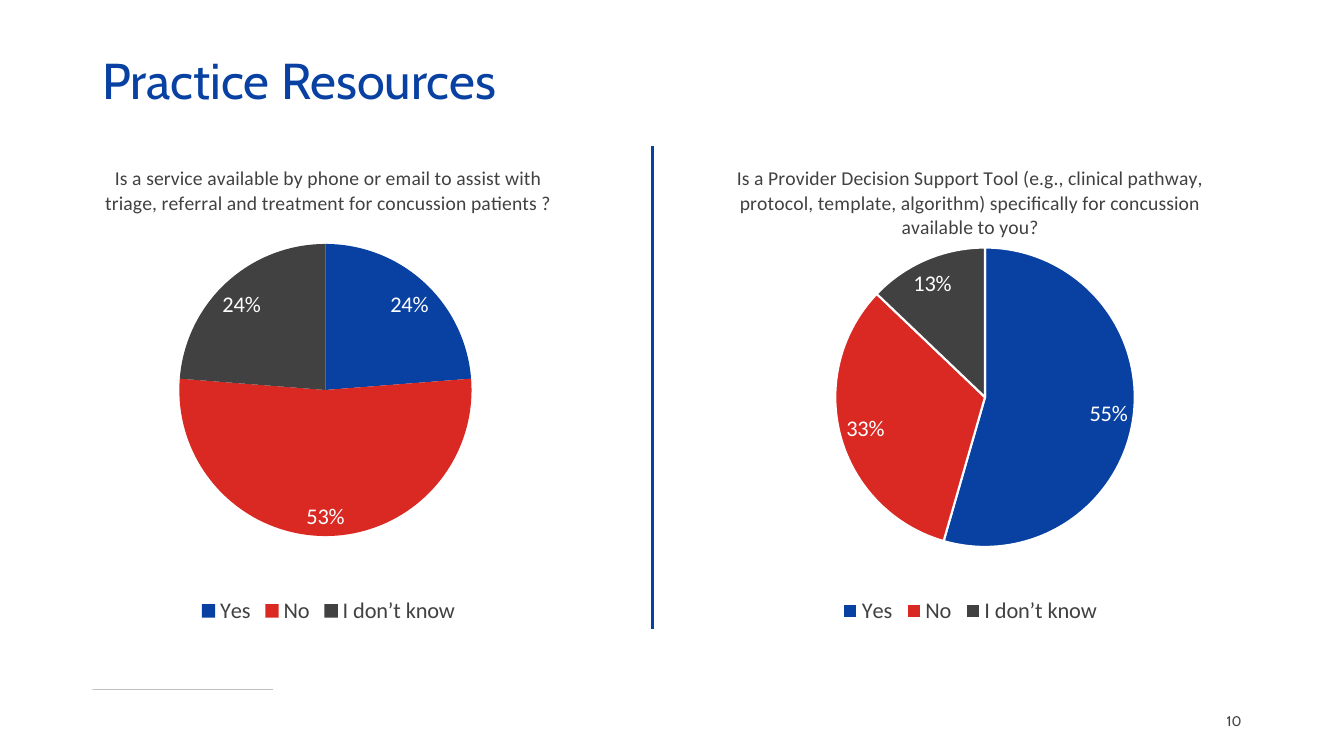
from dataclasses import dataclass

from lxml.etree import SubElement
from pptx import Presentation
from pptx.chart.data import CategoryChartData
from pptx.dml.color import RGBColor
from pptx.enum.chart import XL_CHART_TYPE, XL_LABEL_POSITION, XL_LEGEND_POSITION
from pptx.enum.shapes import MSO_CONNECTOR
from pptx.enum.text import MSO_ANCHOR, PP_ALIGN
from pptx.oxml.ns import qn
from pptx.slide import Slide
from pptx.text.text import Font
from pptx.util import Inches, Pt

COLORS = {"blue": "0841A2", "yes": "0841A1", "no": "DA2823", "gray": "414142",
          "number": "424243", "white": "FFFFFF"}
WIDTH, HEIGHT = Inches(13.33), Inches(7.5)
COLUMNS, ROWS = 160, 90
PANEL_TOP, PANEL_WIDTH, PANEL_HEIGHT = 17.4, 71, 57.5
ANSWERS = {"Yes": "yes", "No": "no", "I don’t know": "gray"}


@dataclass(frozen=True)
class Label:
    """A single line of text in a grid box."""
    text: str
    box: tuple[float, float, float, float]
    size: float
    color: str
    align: PP_ALIGN
    spacing: float = 1.0


@dataclass(frozen=True)
class Rule:
    """A straight line between two grid points."""
    start: tuple[float, float]
    end: tuple[float, float]
    color: str
    weight: float
    opacity: int = 100


@dataclass(frozen=True)
class Question:
    """A survey question with its answers in percent."""
    text: str
    left: float
    values: tuple[int, ...]
    plot: tuple[float, float, float, float]
    outlined: bool


LABELS = (
    Label("10", (113, 83.4, 36, 4.8), 10, "number", PP_ALIGN.RIGHT),
    Label("Practice Resources", (11, 0, 138, 17.4), 36, "blue", PP_ALIGN.LEFT, 1.2),
)
RULES = (
    Rule((11, 82.1), (32.5, 82.1), "gray", 0.25, 50),
    Rule((77.65, PANEL_TOP), (77.65, PANEL_TOP + PANEL_HEIGHT), "blue", 2.25),
)
QUESTIONS = (
    Question("Is a service available by phone or email to assist with triage, "
             "referral and treatment for concussion patients ?",
             3.6, (24, 53, 24), (0.25, 0.2, 0.49, 0.61), False),
    Question("Is a Provider Decision Support Tool (e.g., clinical pathway, protocol, "
             "template, algorithm) specifically for concussion available to you?",
             80, (55, 33, 13), (0.27, 0.21, 0.51, 0.62), True),
)


def across(columns: float) -> int:
    """Turn grid columns into a length."""
    return round(WIDTH * columns / COLUMNS)


def down(rows: float) -> int:
    """Turn grid rows into a length."""
    return round(HEIGHT * rows / ROWS)


def rgb(name: str) -> RGBColor:
    """Look up a named color."""
    return RGBColor.from_string(COLORS[name])


def style_font(font: Font, size: float, color: str, name: str = "Calibri") -> None:
    """Set the face, size and color of a font."""
    font.name, font.size, font.bold = name, Pt(size), False
    font.color.rgb = rgb(color)


def draw_label(slide: Slide, label: Label) -> None:
    """Add a text box."""
    left, top, width, height = label.box
    shape = slide.shapes.add_textbox(across(left), down(top), across(width), down(height))
    frame = shape.text_frame
    frame.word_wrap = True
    frame.vertical_anchor = MSO_ANCHOR.MIDDLE
    paragraph = frame.paragraphs[0]
    paragraph.alignment = label.align
    paragraph.line_spacing = label.spacing
    run = paragraph.add_run()
    run.text = label.text
    style_font(run.font, label.size, label.color, "Cabin")


def draw_rule(slide: Slide, rule: Rule) -> None:
    """Add a straight line without a shadow."""
    (x1, y1), (x2, y2) = rule.start, rule.end
    connector = slide.shapes.add_connector(
        MSO_CONNECTOR.STRAIGHT, across(x1), down(y1), across(x2), down(y2))
    connector.line.width = Pt(rule.weight)
    connector.line.color.rgb = rgb(rule.color)
    properties = connector._element.spPr
    if rule.opacity < 100:
        color = properties.find(".//" + qn("a:srgbClr"))
        SubElement(color, qn("a:alpha"), val=str(rule.opacity * 1000))
    SubElement(properties, qn("a:effectLst"))


def draw_question(slide: Slide, question: Question) -> None:
    """Add a pie chart titled with its question."""
    data = CategoryChartData()
    data.categories = list(ANSWERS)
    data.add_series("Series 1", question.values)
    chart = slide.shapes.add_chart(
        XL_CHART_TYPE.PIE, across(question.left), down(PANEL_TOP),
        across(PANEL_WIDTH), down(PANEL_HEIGHT), data).chart
    style_font(chart.font, 10, "gray")

    run = chart.chart_title.text_frame.paragraphs[0].add_run()
    run.text = question.text
    style_font(run.font, 14, "gray")
    chart.chart_title.include_in_layout = False

    chart.has_legend = True
    chart.legend.position = XL_LEGEND_POSITION.BOTTOM
    chart.legend.include_in_layout = False
    style_font(chart.legend.font, 16, "gray")

    plot = chart.plots[0]
    plot.vary_by_categories = True
    plot.has_data_labels = True
    labels = plot.data_labels
    labels.show_percentage = False
    labels.show_value = True
    labels.number_format = '0"%"'
    labels.number_format_is_linked = False
    labels.position = XL_LABEL_POSITION.BEST_FIT
    style_font(labels.font, 16, "white")

    for index, color in enumerate(ANSWERS.values()):
        slice_format = plot.series[0].points[index].format
        slice_format.fill.solid()
        slice_format.fill.fore_color.rgb = rgb(color)
        if question.outlined:
            slice_format.line.width = Pt(1.5)
            slice_format.line.color.rgb = rgb("white")
        else:
            slice_format.line.fill.background()

    plot_area = chart._chartSpace.chart.plotArea
    for layout in plot_area.findall(qn("c:layout")):
        plot_area.remove(layout)
    layout = SubElement(plot_area, qn("c:layout"))
    plot_area.insert(0, layout)
    manual = SubElement(layout, qn("c:manualLayout"))
    settings = {"layoutTarget": "inner", "xMode": "edge", "yMode": "edge",
                **dict(zip("xywh", question.plot))}
    for tag, value in settings.items():
        SubElement(manual, qn(f"c:{tag}"), val=str(value))


def main() -> None:
    """Build the slide and save it."""
    presentation = Presentation()
    presentation.slide_width, presentation.slide_height = WIDTH, HEIGHT
    slide = presentation.slides.add_slide(presentation.slide_layouts[6])
    for label in LABELS:
        draw_label(slide, label)
    for question in QUESTIONS:
        draw_question(slide, question)
    for rule in RULES:
        draw_rule(slide, rule)
    presentation.save("out.pptx")


if __name__ == "__main__":
    main()
